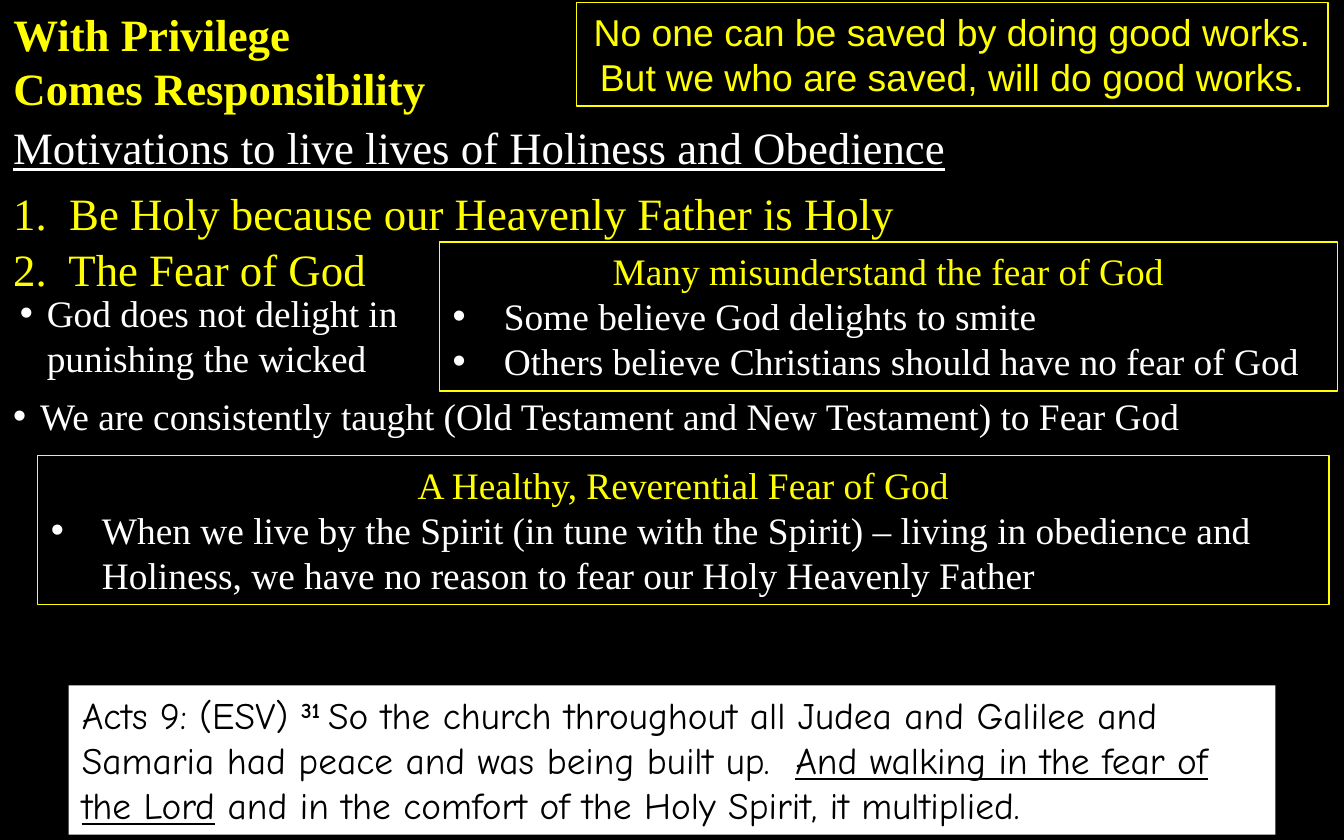
from dataclasses import dataclass, field

from lxml.etree import SubElement
from pptx import Presentation
from pptx.dml.color import RGBColor
from pptx.enum.shapes import MSO_SHAPE
from pptx.enum.text import MSO_ANCHOR, MSO_AUTO_SIZE, PP_ALIGN
from pptx.oxml.ns import qn
from pptx.util import Inches, Pt

BLACK, WHITE, GOLD = "000000", "FFFFFF", "FFFF00"
SERIF, SANS, HAND = "Times New Roman", "Arial", "Comic Neue"
HEAD = {"name": SERIF, "size": Pt(24)}
BODY = {"name": SERIF, "size": Pt(20)}
CALL = {"name": SANS, "size": Pt(20)}
VERSE = {"name": HAND, "size": Pt(20)}
FRAME = {
    "word_wrap": True,
    "auto_size": MSO_AUTO_SIZE.SHAPE_TO_FIT_TEXT,
    "vertical_anchor": MSO_ANCHOR.TOP,
}


@dataclass
class Span:
    text: str
    style: dict = field(default_factory=dict)
    lift: int = 0


@dataclass
class Para:
    spans: list[Span]
    hue: str = WHITE
    align: PP_ALIGN = PP_ALIGN.LEFT
    hang: float = 0


@dataclass
class Block:
    at: tuple[float, float, float, float]
    font: dict
    paras: list[Para]
    line: str = ""
    fill: str = ""


def color(code: str) -> RGBColor:
    return RGBColor.from_string(code)


def apply(item, style: dict) -> None:
    for name, value in style.items():
        setattr(item, name, value)


def line(text: str, hue: str = WHITE, **style) -> Para:
    return Para([Span(text, style)], hue)


def mid(text: str) -> Para:
    return Para([Span(text)], GOLD, PP_ALIGN.CENTER)


def point(text: str, hang: float) -> Para:
    return Para([Span(text)], hang=hang)


def bullet(para, hang: float) -> None:
    props = para._p.get_or_add_pPr()
    props.set("marL", str(Inches(hang)))
    props.set("indent", str(-Inches(hang)))
    SubElement(props, qn("a:buFont")).set("typeface", "Arial")
    SubElement(props, qn("a:buChar")).set("char", "•")


def write(shape, block: Block) -> None:
    frame = shape.text_frame
    apply(frame, FRAME)
    for i, item in enumerate(block.paras):
        para = frame.add_paragraph() if i else frame.paragraphs[0]
        para.alignment = item.align
        if item.hang:
            bullet(para, item.hang)
        for span in item.spans:
            run = para.add_run()
            run.text = span.text
            apply(run.font, block.font | span.style)
            run.font.color.rgb = color(item.hue)
            if span.lift:
                run._r.get_or_add_rPr().set("baseline", str(span.lift * 1000))


def draw(slide, block: Block) -> None:
    place = [Inches(n) for n in block.at]
    if block.line or block.fill:
        shape = slide.shapes.add_shape(MSO_SHAPE.RECTANGLE, *place)
        shape.shadow.inherit = False
        if block.fill:
            shape.fill.solid()
            shape.fill.fore_color.rgb = color(block.fill)
        else:
            shape.fill.background()
        if block.line:
            shape.line.color.rgb = color(block.line)
            shape.line.width = Pt(0.75)
        else:
            shape.line.fill.background()
    else:
        shape = slide.shapes.add_textbox(*place)
    write(shape, block)


TITLE = Block((0, 0, 10, 0.91), HEAD | {"bold": True}, [
    line("With Privilege", GOLD),
    line("Comes Responsibility", GOLD),
])

BLOCKS = [
    Block((4.29, 0.02, 5.59, 0.77), CALL, [
        mid("No one can be saved by doing good works."),
        mid("But we who are saved, will do good works."),
    ], line=GOLD),
    Block((0, 0.84, 8.07, 0.5), HEAD, [
        line("Motivations to live lives of Holiness and Obedience", underline=True),
    ]),
    Block((0, 1.33, 7.52, 0.5), HEAD, [
        line("1.  Be Holy because our Heavenly Father is Holy", GOLD),
    ]),
    Block((0, 1.75, 3.28, 0.5), HEAD, [line("2.  The Fear of God", GOLD)]),
    Block((3.27, 1.8, 6.68, 1.11), BODY, [
        mid("Many misunderstand the fear of God"),
        point("Some believe God delights to smite", 0.38),
        point("Others believe Christians should have no fear of God", 0.38),
    ], line=GOLD),
    Block((0.05, 2.11, 3.27, 0.77), BODY, [
        point("God does not delight in punishing the wicked", 0.2),
    ]),
    Block((0, 2.88, 9.94, 0.44), BODY, [
        point("We are consistently taught (Old Testament and New Testament) "
              "to Fear God", 0.2),
    ]),
    Block((0.51, 5.1, 8.98, 1.11), VERSE, [
        Para([
            Span("Acts 9: (ESV) "),
            Span("31 ", {"bold": True}, 30),
            Span("So the church throughout all Judea and Galilee and Samaria "
                 "had peace and was being built up.  "),
            Span("And walking in the fear of the Lord", {"underline": True}),
            Span(" and in the comfort of the Holy Spirit, it multiplied."),
        ], BLACK),
    ], fill=WHITE),
    Block((0.28, 3.39, 9.61, 1.11), BODY, [
        mid("A Healthy, Reverential Fear of God"),
        point("When we live by the Spirit (in tune with the Spirit) – living in "
              "obedience and Holiness, we have no reason to fear our Holy "
              "Heavenly Father", 0.38),
    ], line=GOLD),
]


def main() -> None:
    deck = Presentation()
    apply(deck, {"slide_width": Inches(10), "slide_height": Inches(6.25)})
    slide = deck.slides.add_slide(deck.slide_layouts[5])
    slide.background.fill.solid()
    slide.background.fill.fore_color.rgb = color(BLACK)
    title = slide.shapes.title
    sides = ("left", "top", "width", "height")
    apply(title, dict(zip(sides, map(Inches, TITLE.at))))
    write(title, TITLE)
    for block in BLOCKS:
        draw(slide, block)
    deck.save("out.pptx")


if __name__ == "__main__":
    main()
